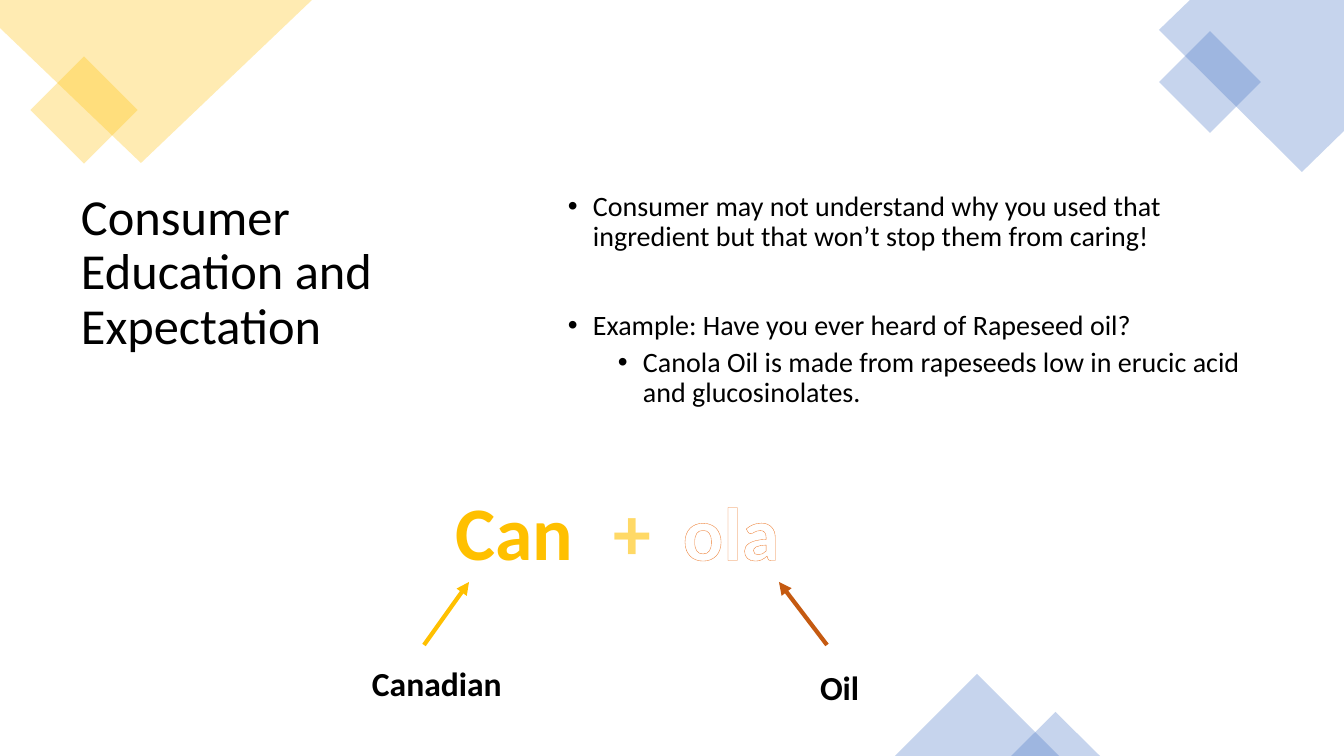
from dataclasses import dataclass

from lxml.etree import SubElement
from pptx import Presentation
from pptx.dml.color import RGBColor
from pptx.enum.shapes import MSO_CONNECTOR, MSO_SHAPE
from pptx.enum.text import MSO_ANCHOR, PP_ALIGN
from pptx.oxml.ns import qn
from pptx.util import Pt


@dataclass(frozen=True)
class Theme:
    font: str = "Calibri"
    black: str = "000000"
    white: str = "FFFFFF"
    gold: str = "FFC000"
    pale_gold: str = "FFD966"
    blue: str = "4472C4"
    orange: str = "ED7D31"
    rust: str = "C55A11"
    title: int = 36
    body: int = 20
    word: int = 54
    label: int = 24
    arrow: int = 3
    tint: int = 30


THEME = Theme()
PX = 12192000 / 1344
SLIDE = (1344, 756)

TITLE = ("Consumer Education and Expectation", (71, 187, 436, 498))
BULLETS_BOX = (558, 187, 714, 498)
BULLETS = [
    ("Consumer may not understand why you used that ingredient but that won’t stop them from caring!", 0, 10),
    ("Example: Have you ever heard of Rapeseed oil?", 0, 42),
    ("Canola Oil is made from rapeseeds low in erucic acid and glucosinolates.", 1, 5),
]
WORD_TOP, WORD_HEIGHT = 480, 102
WORD_PARTS = [
    ("Can", 446, 136, THEME.gold, None),
    ("+", 602, 60, THEME.pale_gold, (THEME.gold, 1)),
    ("ola", 672, 118, THEME.white, (THEME.orange, 0.52)),
]
ORIGINS = [("Canadian", (362, 658, 215, 50)), ("Oil", (810, 662, 108, 50))]
ARROWS = [((424, 645), (469, 582), THEME.gold), ((827, 645), (779, 582), THEME.rust)]

GOLD_CORNER = [(0, 0), (312, 0), (141, 163), (0, 28)]
BLUE_CORNER = [(1190, 0), (1344, 0), (1344, 131), (1302, 172), (1159, 30)]
GOLD_SQUARE = (46, 72, 76, 76)
BLUE_SQUARE = (1174, 46, 72, 72)
BLUE_PEAKS = [(895, 674, 164, 82), (1011, 712, 89, 44)]

INDENT, LEVEL_STEP = 25, 50


def emu(*lengths):
    return [round(length * PX) for length in lengths]


def tint(shape, color, rotation=0):
    shape.shadow.inherit = False
    shape.rotation = rotation
    shape.line.fill.background()
    shape.fill.solid()
    shape.fill.fore_color.rgb = RGBColor.from_string(color)
    srgb = shape.fill._xPr.find(".//" + qn("a:srgbClr"))
    SubElement(srgb, qn("a:alpha"), val=str(THEME.tint * 1000))


def add_corner(shapes, points, color):
    outline = shapes.build_freeform(*points[0], scale=PX)
    outline.add_line_segments(points[1:], close=True)
    tint(outline.convert_to_shape(), color)


def add_preset(shapes, preset, place, color, rotation=0):
    tint(shapes.add_shape(preset, *emu(*place)), color, rotation)


def add_frame(shapes, place, inset=10):
    frame = shapes.add_textbox(*emu(*place)).text_frame
    frame.word_wrap = True
    frame.vertical_anchor = MSO_ANCHOR.TOP
    frame.margin_left = frame.margin_right = emu(inset)[0]
    return frame


def write(paragraph, text, size, color=THEME.black, bold=False,
          align=PP_ALIGN.LEFT, spacing=1.0, before=0, outline=None):
    paragraph.alignment = align
    paragraph.line_spacing = spacing
    paragraph.space_before = Pt(before)
    run = paragraph.add_run()
    run.text = text
    font = run.font
    font.name, font.size, font.bold = THEME.font, Pt(size), bold
    font.color.rgb = RGBColor.from_string(color)
    if outline:
        edge_color, width = outline
        properties = run._r.get_or_add_rPr()
        edge = SubElement(properties, qn("a:ln"), w=str(Pt(width)))
        SubElement(SubElement(edge, qn("a:solidFill")), qn("a:srgbClr"), val=edge_color)
        properties.insert(0, edge)


def add_bullet(paragraph, level):
    paragraph.level = level
    properties = paragraph._p.get_or_add_pPr()
    properties.set("marL", str(emu(INDENT + level * LEVEL_STEP)[0]))
    properties.set("indent", str(emu(-INDENT)[0]))
    SubElement(properties, qn("a:buFont"), typeface="Arial")
    SubElement(properties, qn("a:buChar"), char="•")


def add_arrow(shapes, start, end, color):
    arrow = shapes.add_connector(MSO_CONNECTOR.STRAIGHT, *emu(*start, *end))
    arrow.line.width = Pt(THEME.arrow)
    arrow.line.color.rgb = RGBColor.from_string(color)
    SubElement(arrow.line._get_or_add_ln(), qn("a:tailEnd"), type="triangle")
    SubElement(arrow._element.spPr, qn("a:effectLst"))


def main():
    deck = Presentation()
    deck.slide_width, deck.slide_height = emu(*SLIDE)
    shapes = deck.slides.add_slide(deck.slide_layouts[6]).shapes

    heading, place = TITLE
    write(add_frame(shapes, place).paragraphs[0], heading, THEME.title, spacing=0.9)

    add_preset(shapes, MSO_SHAPE.RECTANGLE, GOLD_SQUARE, THEME.gold, 45)
    add_corner(shapes, GOLD_CORNER, THEME.gold)
    add_corner(shapes, BLUE_CORNER, THEME.blue)
    add_preset(shapes, MSO_SHAPE.RECTANGLE, BLUE_SQUARE, THEME.blue, 45)

    bullets = add_frame(shapes, BULLETS_BOX)
    for index, (text, level, before) in enumerate(BULLETS):
        paragraph = bullets.add_paragraph() if index else bullets.paragraphs[0]
        write(paragraph, text, THEME.body, spacing=0.9, before=before)
        add_bullet(paragraph, level)

    for peak in BLUE_PEAKS:
        add_preset(shapes, MSO_SHAPE.ISOSCELES_TRIANGLE, peak, THEME.blue)

    for text, left, width, color, outline in WORD_PARTS:
        frame = add_frame(shapes, (left, WORD_TOP, width, WORD_HEIGHT), inset=0)
        write(frame.paragraphs[0], text, THEME.word, color=color, bold=True,
              align=PP_ALIGN.CENTER, outline=outline)

    for start, end, color in ARROWS:
        add_arrow(shapes, start, end, color)

    for text, place in ORIGINS:
        write(add_frame(shapes, place).paragraphs[0], text, THEME.label, bold=True)

    deck.save("out.pptx")


if __name__ == "__main__":
    main()
